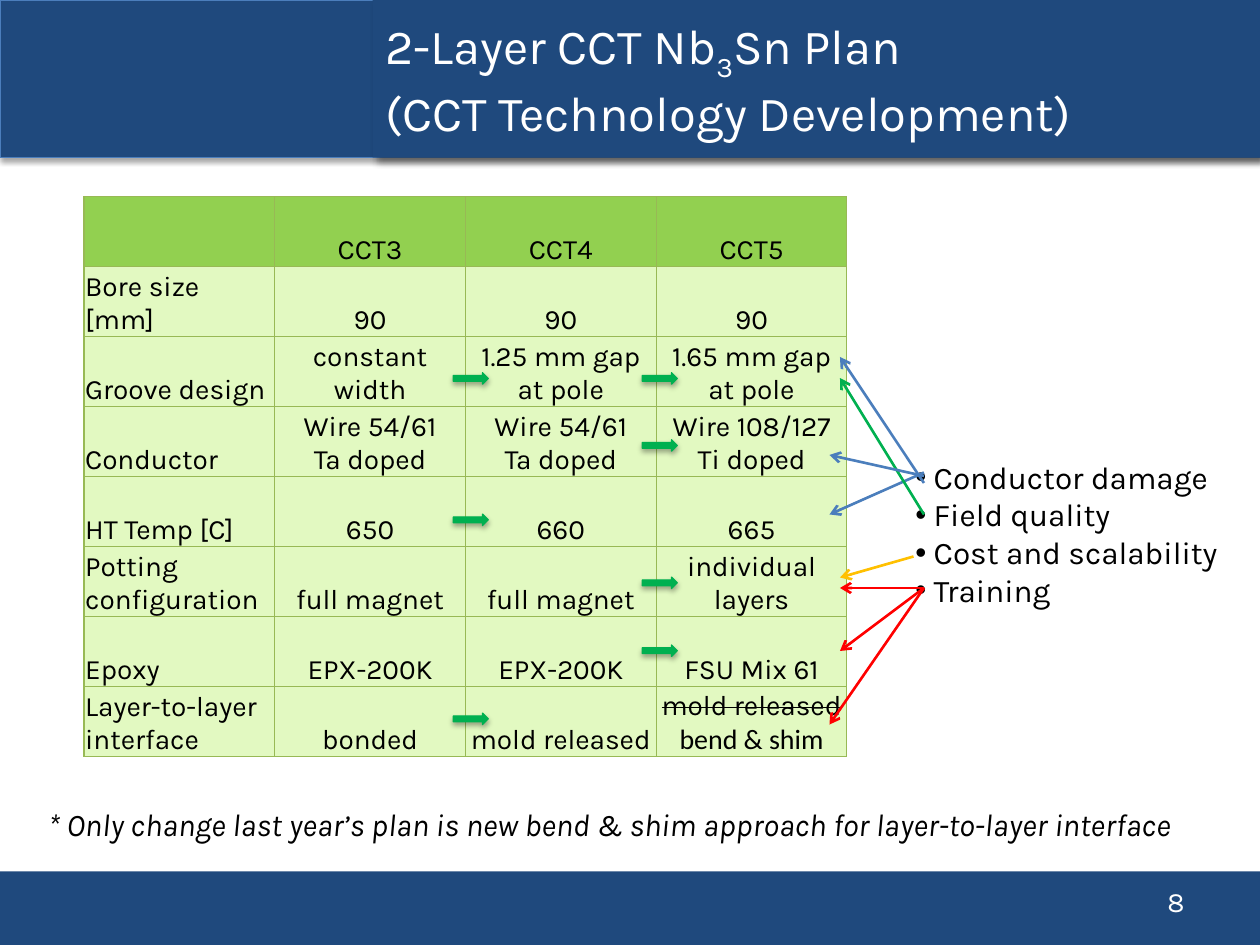
from lxml.etree import SubElement
from pptx import Presentation
from pptx.dml.color import RGBColor
from pptx.enum.shapes import MSO_CONNECTOR, MSO_SHAPE
from pptx.enum.text import MSO_ANCHOR, MSO_AUTO_SIZE, PP_ALIGN
from pptx.oxml import parse_xml
from pptx.oxml.ns import nsdecls, qn
from pptx.util import Pt

# Content: a paragraph is a string or a list of (text, format) spans
NAVY, BLUE, GREEN, RED, AMBER = "1F497D", "4B7EBC", "00B050", "FF0000", "FFC000"
HEADER_FILL, BODY_FILL, BORDER = "92D050", "E2F9C1", "98B955"

TITLE = [("2-Layer CCT Nb", {}), ("3", {"baseline": -25000}), ("Sn Plan", {}),
         ("\n", {}), ("(CCT Technology Development)", {})]
ROWS = [
    ["", "CCT3", "CCT4", "CCT5"],
    ["Bore size [mm]", "90", "90", "90"],
    ["Groove design", "constant width", "1.25 mm gap at pole", "1.65 mm gap at pole"],
    ["Conductor", ["Wire 54/61", "Ta doped"], ["Wire 54/61", "Ta doped"],
     ["Wire 108/127", "Ti doped"]],
    ["HT Temp [C]", "650", "660", "665"],
    ["Potting configuration", "full magnet", "full magnet", "individual layers"],
    ["Epoxy", "EPX-200K", "EPX-200K", "FSU Mix 61"],
    ["Layer-to-layer interface", "bonded", "mold released",
     [[("mold released", {"strike": "sngStrike"})],
      [("bend & shim", {"font": "Calibri"})]]],
]
GOALS = ["Conductor damage", "Field quality", "Cost and scalability", "Training"]
NOTE = ("* Only change last year’s plan is new bend & shim approach "
        "for layer-to-layer interface")

# Links from goals to table cells: start, end, colour
LINKS = [
    ((528, 276), (480, 204), BLUE),
    ((528, 270), (474, 294), BLUE),
    ((522, 318), (480, 330), AMBER),
    ((528, 336), (480, 372), RED),
    ((528, 294), (480, 216), GREEN),
    ((528, 336), (474, 414), RED),
    ((528, 336), (480, 336), RED),
    ((528, 272), (474, 260), BLUE),
]
# Change arrows: column they leave (1 = CCT3), top
CHANGES = [(1, 213), (2, 213), (2, 251.3), (1, 293.8), (2, 329.8), (2, 368.6), (1, 407.5)]

TABLE_LEFT, TABLE_TOP, COLUMN_WIDTH, ROW_HEIGHT = 48, 112.4, 109, 40
SOFT_SHADOW = (35, 3.1, 1.8, 90)
TITLE_SHADOW = (43, 4, 3, 45)


def color(value):
    return RGBColor.from_string(value)


def write(frame, paragraphs, size=16, ink="000000", align=PP_ALIGN.LEFT,
          anchor=MSO_ANCHOR.TOP, italic=False, bullet_indent=0):
    frame.word_wrap = True
    frame.vertical_anchor = anchor
    for index, spans in enumerate(paragraphs):
        para = frame.paragraphs[0] if index == 0 else frame.add_paragraph()
        para.alignment = align
        if bullet_indent:
            properties = para._p.get_or_add_pPr()
            properties.set("marL", str(Pt(bullet_indent)))
            properties.set("indent", str(-Pt(bullet_indent)))
            SubElement(properties, qn("a:buFont"), typeface="Arial")
            SubElement(properties, qn("a:buChar"), char="•")
        for text, extra in [(spans, {})] if isinstance(spans, str) else spans:
            if text == "\n":
                para.add_line_break()
                continue
            span = para.add_run()
            span.text = text
            span.font.size = Pt(size)
            span.font.name = extra.get("font", "Karla")
            span.font.italic = italic
            span.font.color.rgb = color(ink)
            for name in ("baseline", "strike"):
                if name in extra:
                    span.font._element.set(name, str(extra[name]))


def paint(shape, fill, line=None, shadow=None):
    shape.fill.solid()
    shape.fill.fore_color.rgb = color(fill)
    if line:
        shape.line.color.rgb = color(line)
        shape.line.width = Pt(0.75)
    else:
        shape.line.fill.background()
    shape.shadow.inherit = False
    if shadow:
        opacity, blur, distance, angle = shadow
        effects = shape._element.spPr.find(qn("a:effectLst"))
        outer = SubElement(effects, qn("a:outerShdw"), blurRad=str(Pt(blur)),
                           dist=str(Pt(distance)), dir=str(angle * 60000), rotWithShape="0")
        ink = SubElement(outer, qn("a:srgbClr"), val="000000")
        SubElement(ink, qn("a:alpha"), val=str(opacity * 1000))


def add_shape(kind, left, top, width, height, fill, **style):
    shape = page.shapes.add_shape(kind, Pt(left), Pt(top), Pt(width), Pt(height))
    paint(shape, fill, **style)


def add_text(left, top, width, height, paragraphs, **style):
    box = page.shapes.add_textbox(Pt(left), Pt(top), Pt(width), Pt(height))
    write(box.text_frame, paragraphs, **style)


def add_borders(cell):
    properties = cell._tc.get_or_add_tcPr()
    for index, side in enumerate("LRTB"):
        properties.insert(index, parse_xml(
            f'<a:ln{side} {nsdecls("a")} w="{Pt(0.75)}"><a:solidFill>'
            f'<a:srgbClr val="{BORDER}"/></a:solidFill></a:ln{side}>'))


deck = Presentation()
deck.slide_width, deck.slide_height = Pt(720), Pt(540)
page = deck.slides.add_slide(deck.slide_layouts[5])

# Footer and header bars, with the title above them
add_shape(MSO_SHAPE.RECTANGLE, 0, 498, 720, 42, NAVY)
add_shape(MSO_SHAPE.RECTANGLE, 0, 0, 720, 90, NAVY, line=BLUE, shadow=SOFT_SHADOW)
title = page.shapes.title
page.shapes._spTree.append(title._element)
title.left, title.top, title.width, title.height = Pt(213), Pt(0), Pt(507), Pt(90)
paint(title, NAVY, shadow=TITLE_SHADOW)
title.text_frame.auto_size = MSO_AUTO_SIZE.NONE
write(title.text_frame, [TITLE], size=28, ink="FFFFFF", anchor=MSO_ANCHOR.MIDDLE)

# Page number
add_text(643, 500.5, 41, 29, ["8"], ink="FFFFFF", align=PP_ALIGN.RIGHT,
         anchor=MSO_ANCHOR.MIDDLE)

# Plan table
table = page.shapes.add_table(
    len(ROWS), len(ROWS[0]), Pt(TABLE_LEFT), Pt(TABLE_TOP),
    Pt(COLUMN_WIDTH * len(ROWS[0])), Pt(ROW_HEIGHT * len(ROWS))).table
for column in table.columns:
    column.width = Pt(COLUMN_WIDTH)
for row_index, row in enumerate(ROWS):
    table.rows[row_index].height = Pt(ROW_HEIGHT)
    for column_index, content in enumerate(row):
        cell = table.cell(row_index, column_index)
        cell.fill.solid()
        cell.fill.fore_color.rgb = color(BODY_FILL if row_index else HEADER_FILL)
        cell.margin_left = cell.margin_right = cell.margin_top = Pt(0.7)
        cell.margin_bottom = 0
        cell.vertical_anchor = MSO_ANCHOR.BOTTOM
        add_borders(cell)
        if content:
            write(cell.text_frame, [content] if isinstance(content, str) else content,
                  align=PP_ALIGN.CENTER if column_index else PP_ALIGN.LEFT,
                  anchor=MSO_ANCHOR.BOTTOM)

# Goals and their links to the table
add_text(516, 258, 192, 94, GOALS, size=18, bullet_indent=10.5)
for start, end, ink in LINKS:
    link = page.shapes.add_connector(MSO_CONNECTOR.STRAIGHT, *map(Pt, start + end))
    link.line.color.rgb = color(ink)
    link.line.width = Pt(1.5)
    SubElement(link.line._get_or_add_ln(), qn("a:tailEnd"), type="arrow")
    SubElement(link._element.spPr, qn("a:effectLst"))

# Arrows marking a change from one magnet to the next
for column_number, top in CHANGES:
    add_shape(MSO_SHAPE.RIGHT_ARROW, 151 + 108 * column_number, top, 20, 6.5, GREEN,
              line=GREEN, shadow=SOFT_SHADOW)

# Closing note
add_text(20.5, 456.5, 680, 29, [NOTE], size=18, italic=True)

deck.save("out.pptx")
